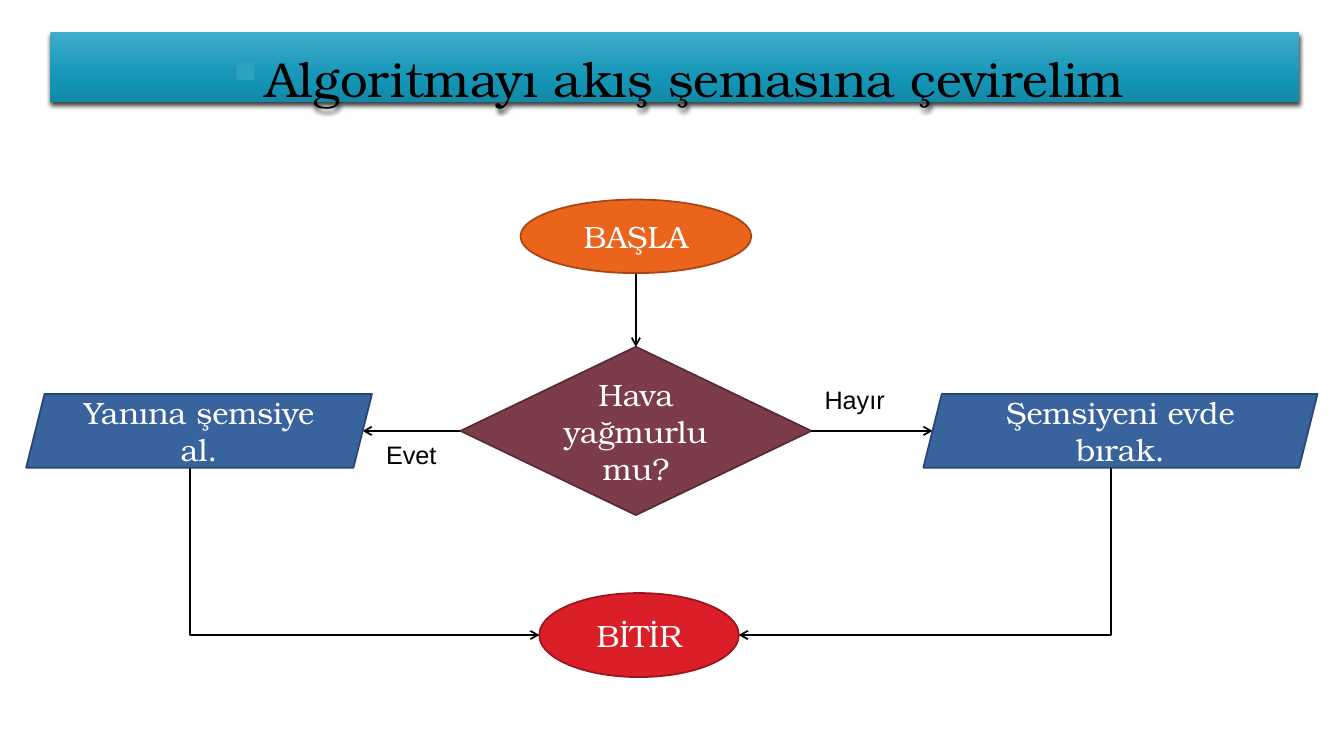
from dataclasses import dataclass

import lxml.etree
import pptx
import pptx.dml.color
import pptx.enum.shapes
import pptx.enum.text
import pptx.oxml
import pptx.oxml.ns
import pptx.util

SHAPES = pptx.enum.shapes.MSO_SHAPE
LINES = pptx.enum.shapes.MSO_CONNECTOR
ANCHOR = pptx.enum.text.MSO_ANCHOR
CENTER = pptx.enum.text.PP_ALIGN.CENTER
SERIF = "TeX Gyre Bonum"
NAMESPACE = pptx.oxml.ns.nsdecls("a")

deck = pptx.Presentation()
deck.slide_width = pptx.util.Inches(13.33)
deck.slide_height = pptx.util.Inches(7.5)
slide = deck.slides.add_slide(deck.slide_layouts[6])
COLUMN = deck.slide_width / 160
ROW = deck.slide_height / 90


@dataclass(frozen=True)
class Step:
    text: str
    kind: SHAPES
    x: float
    y: float
    width: float
    height: float
    fill: str
    outline: str

    @property
    def slant(self) -> float:
        return self.height / 8 if self.kind == SHAPES.PARALLELOGRAM else 0

    @property
    def left(self) -> float:
        return self.x - self.width / 2 + self.slant

    @property
    def right(self) -> float:
        return self.x + self.width / 2 - self.slant

    @property
    def top(self) -> float:
        return self.y - self.height / 2

    @property
    def bottom(self) -> float:
        return self.y + self.height / 2


@dataclass(frozen=True)
class Answer:
    text: str
    left: float
    top: float
    width: float


def columns(count: float) -> int:
    return round(count * COLUMN)


def rows(count: float) -> int:
    return round(count * ROW)


def color(value: str) -> pptx.dml.color.RGBColor:
    return pptx.dml.color.RGBColor.from_string(value)


def write(frame, text: str, size: float, font: str, ink: str, align=None) -> None:
    frame.text = text
    for paragraph in frame.paragraphs:
        paragraph.alignment = align
        for run in paragraph.runs:
            run.font.size = pptx.util.Pt(size)
            run.font.name = font
            run.font.color.rgb = color(ink)


def set_insets(frame) -> None:
    frame.margin_left = frame.margin_right = pptx.util.Inches(0.13)
    frame.margin_top = frame.margin_bottom = pptx.util.Inches(0.07)


def draw_step(step: Step):
    box = slide.shapes.add_shape(
        step.kind, columns(step.x - step.width / 2), rows(step.top),
        columns(step.width), rows(step.height))
    box.shadow.inherit = False
    box.fill.solid()
    box.fill.fore_color.rgb = color(step.fill)
    box.line.color.rgb = color(step.outline)
    box.line.width = pptx.util.Pt(1.25)
    set_insets(box.text_frame)
    box.text_frame.vertical_anchor = ANCHOR.MIDDLE
    write(box.text_frame, step.text, 22, SERIF, "FFFFFF", CENTER)
    return box


def draw_answer(answer: Answer) -> None:
    label = slide.shapes.add_textbox(
        columns(answer.left), rows(answer.top), columns(answer.width), rows(5.28))
    set_insets(label.text_frame)
    label.text_frame.word_wrap = False
    label.text_frame.auto_size = pptx.enum.text.MSO_AUTO_SIZE.SHAPE_TO_FIT_TEXT
    write(label.text_frame, answer.text, 18, "Arial", "000000")


def draw_arrow(kind: LINES, x1: int, y1: int, x2: int, y2: int):
    arrow = slide.shapes.add_connector(kind, x1, y1, x2, y2)
    arrow.line.color.rgb = color("000000")
    arrow.line.width = pptx.util.Pt(1.25)
    outline = arrow.line._get_or_add_ln()
    lxml.etree.SubElement(outline, pptx.oxml.ns.qn("a:tailEnd"), type="arrow")
    lxml.etree.SubElement(arrow._element.spPr, pptx.oxml.ns.qn("a:effectLst"))
    return arrow


def draw_straight(x1: float, y1: float, x2: float, y2: float):
    return draw_arrow(LINES.STRAIGHT, columns(x1), rows(y1), columns(x2), rows(y2))


def draw_down_then_across(x1: float, y1: float, x2: float, y2: float) -> None:
    rightward = x2 > x1
    middle_x, middle_y = columns((x1 + x2) / 2), rows((y1 + y2) / 2)
    half_drop, half_run = rows((y2 - y1) / 2), columns(abs(x2 - x1) / 2)
    side = -half_drop if rightward else half_drop
    arrow = draw_arrow(LINES.ELBOW, middle_x - side, middle_y - half_run,
                       middle_x + side, middle_y + half_run)
    properties = arrow._element.spPr
    properties.find(pptx.oxml.ns.qn("a:prstGeom")).set("prst", "bentConnector2")
    turn = 270 if rightward else 90
    properties.find(pptx.oxml.ns.qn("a:xfrm")).set("rot", str(turn * 60000))


def draw_heading(text: str) -> None:
    banner = slide.shapes.add_shape(
        SHAPES.RECTANGLE, columns(6), rows(3.76), columns(148.7), rows(8.36))
    banner.line.fill.background()
    stops = "".join(
        f'<a:gs pos="{share * 1000}"><a:srgbClr val="{value}"/></a:gs>'
        for share, value in ((0, "3FACCA"), (69, "1495B6"), (100, "1289A6")))
    properties = banner._element.spPr
    properties.insert(2, pptx.oxml.parse_xml(
        f'<a:gradFill {NAMESPACE} rotWithShape="1"><a:gsLst>{stops}</a:gsLst>'
        '<a:lin ang="5400000" scaled="0"/></a:gradFill>'))
    properties.append(pptx.oxml.parse_xml(
        f'<a:effectLst {NAMESPACE}><a:outerShdw blurRad="38100" dist="25400" '
        'dir="5400000" rotWithShape="0"><a:srgbClr val="000000">'
        '<a:alpha val="75000"/></a:srgbClr></a:outerShdw></a:effectLst>'))
    banner.text_frame.vertical_anchor = ANCHOR.TOP
    write(banner.text_frame, text, 35, SERIF, "000000", CENTER)
    heading = banner.text_frame.paragraphs[0]
    heading.line_spacing = 1.2
    heading.space_before = pptx.util.Pt(10)
    layout = heading._p.get_or_add_pPr()
    layout.set("marL", "228600")
    layout.set("indent", "-228600")
    for bullet in ('buClr {}><a:srgbClr val="2DA2BF"/></a:buClr>',
                   'buSzPct {} val="110000"/>', 'buChar {} char="▪"/>'):
        layout.append(pptx.oxml.parse_xml("<a:" + bullet.format(NAMESPACE)))


start = Step("BAŞLA", SHAPES.OVAL, 75.7, 28.14, 27.48, 8.76, "EB641B", "A64713")
question = Step("Hava\vyağmurlu \nmu?", SHAPES.DIAMOND, 75.7, 51.3, 41.76, 20.04,
                "7D3C4A", "582A35")
take = Step("Yanına şemsiye al.", SHAPES.PARALLELOGRAM, 23.7, 51.3, 41.16, 8.76,
            "39639D", "28466F")
leave = Step("Şemsiyeni evde bırak.", SHAPES.PARALLELOGRAM, 133.38, 51.3, 46.92, 8.76,
             "39639D", "28466F")
finish = Step("BİTİR", SHAPES.OVAL, 76.08, 75.6, 23.76, 10, "DA1F28", "9A161D")

decision = draw_step(question)
draw_step(finish)
draw_straight(question.left, question.y, take.right, take.y).begin_connect(decision, 1)
draw_straight(question.right, question.y, leave.left, leave.y).begin_connect(decision, 3)
draw_down_then_across(leave.x - leave.slant, leave.bottom, finish.right, finish.y)
draw_down_then_across(take.x - take.slant, take.bottom, finish.left, finish.y)
for answer in (Answer("Hayır", 96.6, 44.9, 10.44), Answer("Evet", 44.4, 51.5, 9.24)):
    draw_answer(answer)
draw_straight(start.x, start.bottom, question.x, question.top).end_connect(decision, 0)
for step in (take, leave, start):
    draw_step(step)
draw_heading("Algoritmayı akış şemasına çevirelim")
deck.save("out.pptx")
